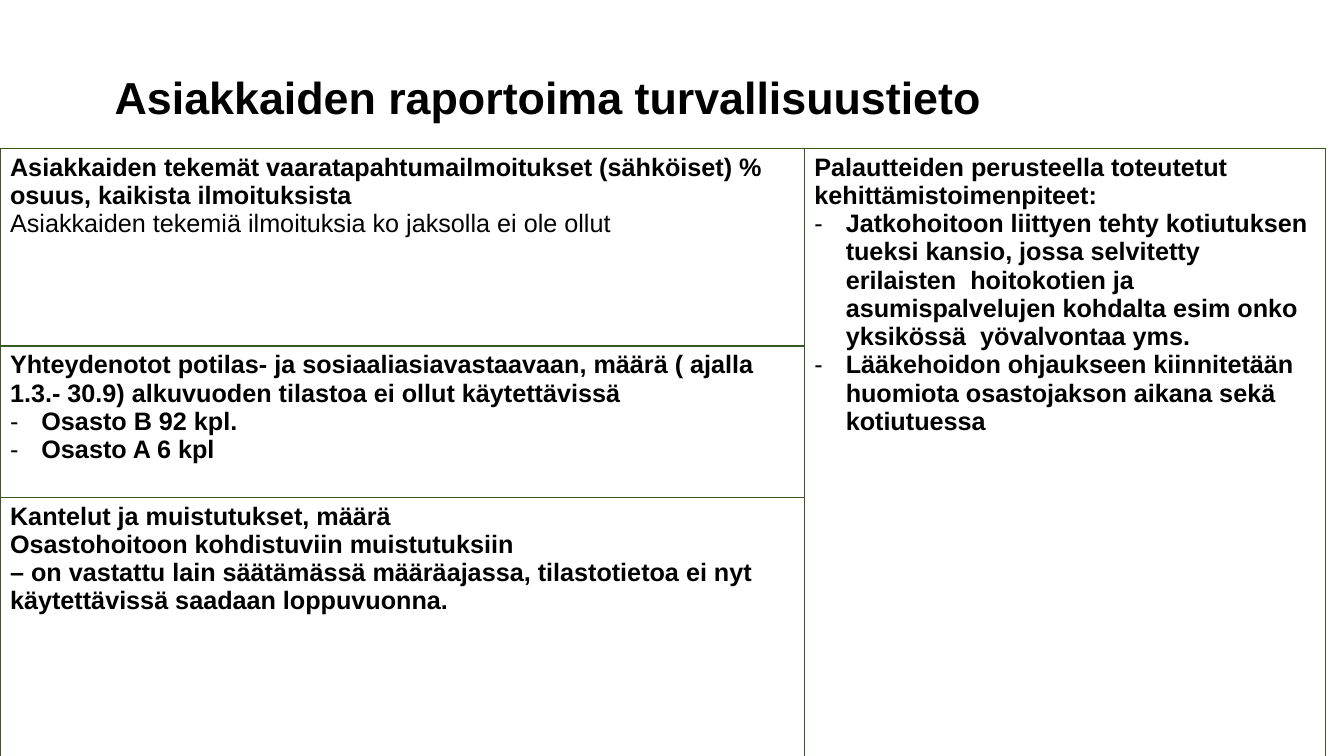
from lxml.etree import SubElement
from pptx import Presentation
from pptx.dml.color import RGBColor
from pptx.enum.text import MSO_ANCHOR
from pptx.oxml.ns import qn
from pptx.util import Cm, Pt

COLORS = {"text": "000000", "border": "385723", "background": "FFFFFF"}
FONT = "Arial"
BULLET_INDENT = Cm(0.79)
COLUMN_WIDTHS = [20.27, 13.13]
ROW_HEIGHTS = [4.98, 3.81, 6.6]

# Each paragraph: text, bold, bulleted
CELL_TEXTS = {
    (0, 0): [
        ("Asiakkaiden tekemät vaaratapahtumailmoitukset (sähköiset) % osuus, "
         "kaikista ilmoituksista", True, False),
        ("Asiakkaiden tekemiä ilmoituksia ko jaksolla ei ole ollut", False, False),
    ],
    (0, 1): [
        ("Palautteiden perusteella toteutetut kehittämistoimenpiteet:", True, False),
        ("Jatkohoitoon liittyen tehty kotiutuksen tueksi kansio, jossa selvitetty "
         "erilaisten  hoitokotien ja asumispalvelujen kohdalta esim onko "
         "yksikössä  yövalvontaa yms.", True, True),
        ("Lääkehoidon ohjaukseen kiinnitetään huomiota osastojakson aikana sekä "
         "kotiutuessa", True, True),
    ],
    (1, 0): [
        ("Yhteydenotot potilas- ja sosiaaliasiavastaavaan, määrä ( ajalla "
         "1.3.- 30.9) alkuvuoden tilastoa ei ollut käytettävissä", True, False),
        ("Osasto B 92 kpl.", True, True),
        ("Osasto A 6 kpl", True, True),
    ],
    (2, 0): [
        ("Kantelut ja muistutukset, määrä", True, False),
        ("Osastohoitoon kohdistuviin muistutuksiin", True, False),
        ("– on vastattu lain säätämässä määräajassa, tilastotietoa ei nyt "
         "käytettävissä saadaan loppuvuonna.", True, False),
    ],
}


def write_paragraph(paragraph, text, size, bold, bulleted=False):
    paragraph.text = text
    if bulleted:
        properties = paragraph._p.get_or_add_pPr()
        properties.set("marL", str(BULLET_INDENT))
        properties.set("indent", str(-BULLET_INDENT))
        SubElement(properties, qn("a:buFont"), typeface=FONT)
        SubElement(properties, qn("a:buChar"), char="-")
    for run in paragraph.runs:
        run.font.name = FONT
        run.font.size = Pt(size)
        run.font.bold = bold
        run.font.color.rgb = RGBColor.from_string(COLORS["text"])


def style_cell(cell):
    """Give the cell a plain fill and a thin line on all four sides."""
    properties = cell._tc.get_or_add_tcPr()
    for side in ("a:lnL", "a:lnR", "a:lnT", "a:lnB"):
        line = SubElement(properties, qn(side), w=str(Pt(1)))
        line_fill = SubElement(line, qn("a:solidFill"))
        SubElement(line_fill, qn("a:srgbClr"), val=COLORS["border"])
    cell.fill.solid()
    cell.fill.fore_color.rgb = RGBColor.from_string(COLORS["background"])


presentation = Presentation()
presentation.slide_width = Cm(33.87)
presentation.slide_height = Cm(19.05)
slide = presentation.slides.add_slide(presentation.slide_layouts[6])

title = slide.shapes.add_textbox(Cm(2.64), Cm(0.69), Cm(25.68), Cm(3.68))
title.text_frame.word_wrap = True
title.text_frame.vertical_anchor = MSO_ANCHOR.MIDDLE
title_paragraph = title.text_frame.paragraphs[0]
title_paragraph.line_spacing = 0.9
write_paragraph(title_paragraph, "Asiakkaiden raportoima turvallisuustieto", 32, True)

table = slide.shapes.add_table(
    len(ROW_HEIGHTS), len(COLUMN_WIDTHS), Cm(0), Cm(3.74),
    Cm(sum(COLUMN_WIDTHS)), Cm(sum(ROW_HEIGHTS))).table
table.first_row = False
table.horz_banding = False
for column, width in zip(table.columns, COLUMN_WIDTHS):
    column.width = Cm(width)
for row, height in zip(table.rows, ROW_HEIGHTS):
    row.height = Cm(height)
for cell in table.iter_cells():
    style_cell(cell)
table.cell(0, 1).merge(table.cell(2, 1))

for (row_index, column_index), paragraphs in CELL_TEXTS.items():
    text_frame = table.cell(row_index, column_index).text_frame
    for index, (text, bold, bulleted) in enumerate(paragraphs):
        paragraph = text_frame.add_paragraph() if index else text_frame.paragraphs[0]
        write_paragraph(paragraph, text, 18, bold, bulleted)

presentation.save("out.pptx")
